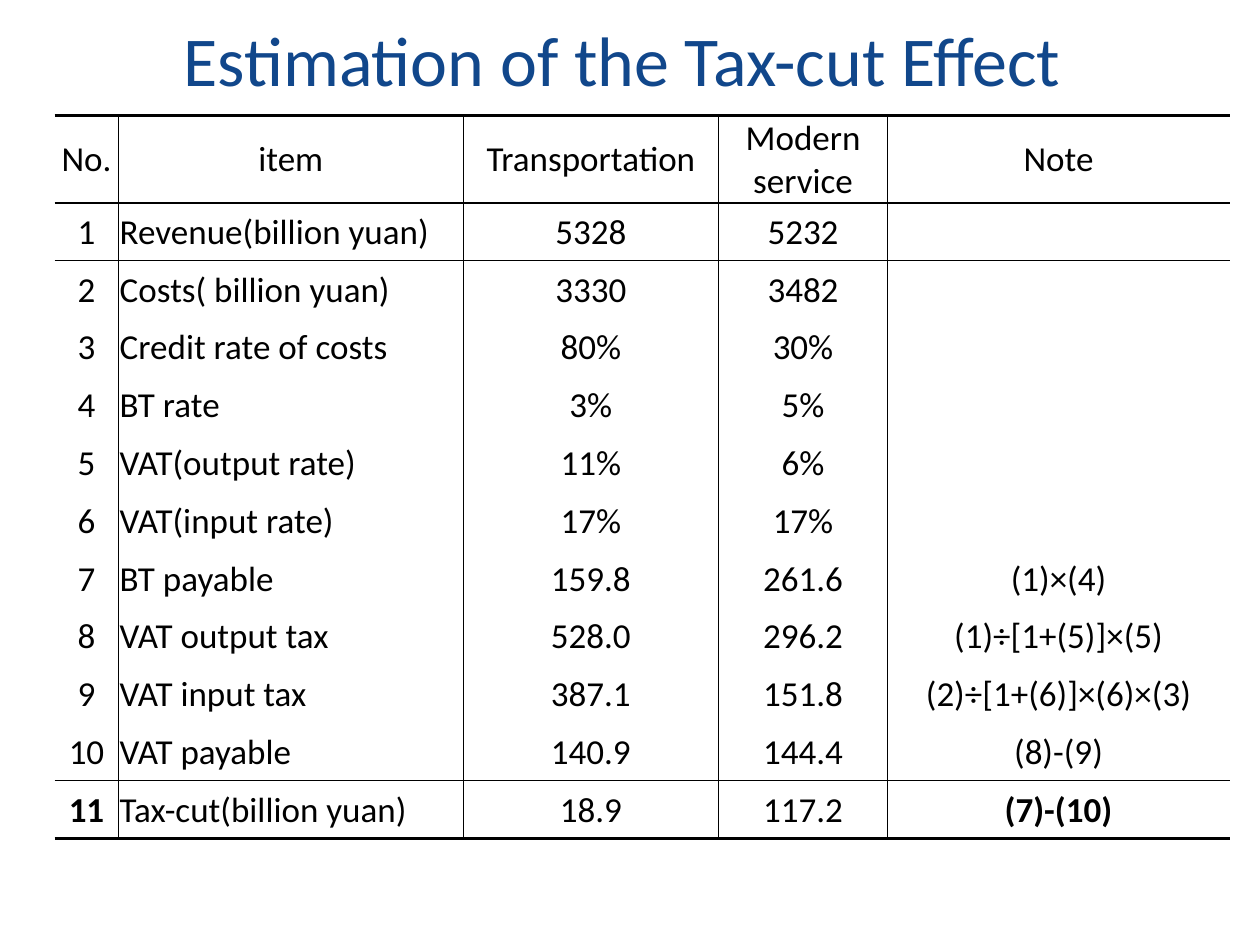
from lxml.etree import SubElement
from pptx import Presentation
from pptx.dml.color import RGBColor
from pptx.enum.text import MSO_ANCHOR as Anchor, PP_ALIGN as Align
from pptx.oxml.ns import qn
from pptx.util import Pt

TITLE = "Estimation of the Tax-cut Effect "
ROWS = [
    ("No.", "item", "Transportation", "Modern service", "Note"),
    ("1", "Revenue(billion yuan)", "5328", "5232", ""),
    ("2", "Costs( billion yuan)", "3330", "3482", ""),
    ("3", "Credit rate of costs", "80%", "30%", ""),
    ("4", "BT rate", "3%", "5%", ""),
    ("5", "VAT(output rate)", "11%", "6%", ""),
    ("6", "VAT(input rate)", "17%", "17%", ""),
    ("7", "BT payable", "159.8", "261.6", "(1)×(4)"),
    ("8", "VAT output tax", "528.0", "296.2", "(1)÷[1+(5)]×(5)"),
    ("9", "VAT input tax", "387.1", "151.8", "(2)÷[1+(6)]×(6)×(3)"),
    ("10", "VAT payable", "140.9", "144.4", "(8)-(9)"),
    ("11", "Tax-cut(billion yuan)", "18.9", "117.2", "(7)-(10)"),
]
BOLD_TEXTS = {"11", "(7)-(10)"}

BLUE = RGBColor(0x11, 0x47, 0x8B)
BLACK = RGBColor(0, 0, 0)
WHITE = RGBColor(255, 255, 255)
FONT = "Calibri"

COLUMN_WIDTHS = [36.5, 197, 146, 96.5, 195.5]
HEADER_HEIGHT, ROW_HEIGHT = 49.3, 33.05
TABLE_LEFT, TABLE_TOP = 31.2, 66.2
HORIZONTAL_RULES = {0: 2, 1: 1, 2: 0.75, 11: 0.75, 12: 2}
VERTICAL_RULES = {1: 0.75, 2: 0.75, 3: 1, 4: 1}


def write_text(frame, text, size=20, color=BLACK, bold=False, align=Align.CENTER):
    paragraph = frame.paragraphs[0]
    paragraph.alignment = align
    run = paragraph.add_run()
    run.text = text
    font = run.font
    font.name, font.size, font.bold = FONT, Pt(size), bold
    font.color.rgb = color


def add_border(cell, side, width):
    line = SubElement(cell._tc.get_or_add_tcPr(), qn(f"a:ln{side}"))
    if width:
        line.set("w", str(Pt(width)))
        fill = SubElement(line, qn("a:solidFill"))
        SubElement(fill, qn("a:srgbClr")).set("val", str(BLACK))
    else:
        line.set("w", "0")
        SubElement(line, qn("a:noFill"))


def format_cell(cell, row, column):
    cell.margin_left = cell.margin_right = cell.margin_top = Pt(0.75)
    cell.margin_bottom = Pt(0)
    cell.vertical_anchor = Anchor.MIDDLE
    add_border(cell, "L", VERTICAL_RULES.get(column))
    add_border(cell, "R", VERTICAL_RULES.get(column + 1))
    add_border(cell, "T", HORIZONTAL_RULES.get(row))
    add_border(cell, "B", HORIZONTAL_RULES.get(row + 1))
    cell.fill.solid()
    cell.fill.fore_color.rgb = WHITE


def add_tax_table(slide):
    heights = [HEADER_HEIGHT] + [ROW_HEIGHT] * (len(ROWS) - 1)
    table = slide.shapes.add_table(
        len(ROWS), len(COLUMN_WIDTHS), Pt(TABLE_LEFT), Pt(TABLE_TOP),
        Pt(sum(COLUMN_WIDTHS)), Pt(sum(heights))).table
    table.first_row = table.horz_banding = False
    for column, width in zip(table.columns, COLUMN_WIDTHS):
        column.width = Pt(width)
    for row, height in zip(table.rows, heights):
        row.height = Pt(height)
    for row, texts in enumerate(ROWS):
        for column, text in enumerate(texts):
            cell = table.cell(row, column)
            format_cell(cell, row, column)
            if text:
                is_item = row > 0 and column == 1
                write_text(cell.text_frame, text, bold=text in BOLD_TEXTS,
                           align=Align.LEFT if is_item else Align.CENTER)


def main():
    presentation = Presentation()
    presentation.slide_width, presentation.slide_height = Pt(720), Pt(540)
    slide = presentation.slides.add_slide(presentation.slide_layouts[5])
    title = slide.shapes.title
    title.left, title.top, title.width, title.height = Pt(54), Pt(0.7), Pt(612), Pt(65.5)
    title.text_frame.vertical_anchor = Anchor.MIDDLE
    write_text(title.text_frame, TITLE, size=40, color=BLUE)
    add_tax_table(slide)
    presentation.save("out.pptx")


if __name__ == "__main__":
    main()
